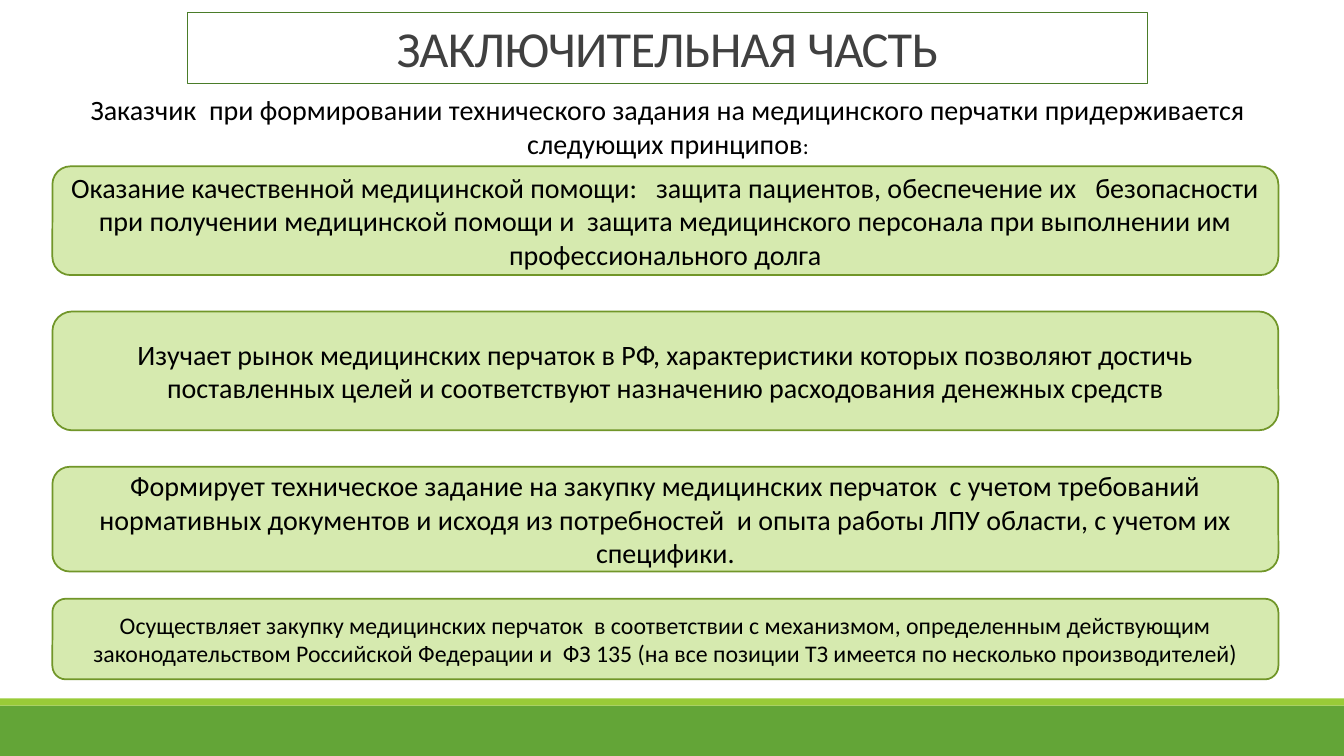
from pptx import Presentation
from pptx.dml.color import RGBColor
from pptx.enum.shapes import MSO_SHAPE
from pptx.enum.text import MSO_ANCHOR, PP_ALIGN
from pptx.util import Inches, Pt

RECTANGLE = MSO_SHAPE.RECTANGLE
ROUNDED = MSO_SHAPE.ROUNDED_RECTANGLE
CENTER = PP_ALIGN.CENTER
MIDDLE, TOP = MSO_ANCHOR.MIDDLE, MSO_ANCHOR.TOP

FONT = "Calibri"
WIDTH, HEIGHT = Inches(13.33), Inches(7.5)
COLORS = {
    "footer": "63A537",
    "stripe": "99CB38",
    "title_border": "4A7C29",
    "title": "404040",
    "text": "000000",
    "card": "D6EAAF",
    "card_border": "719629",
}

TITLE = "ЗАКЛЮЧИТЕЛЬНАЯ ЧАСТЬ"
INTRO = [
    ("Заказчик  при формировании технического задания на медицинского "
     "перчатки придерживается следующих принципов", 20),
    (":", 16),
]
PRINCIPLES = [
    (0, 21.2, 20,
     "Оказание качественной медицинской помощи:   защита пациентов, "
     "обеспечение их   безопасности при получении медицинской помощи и  "
     "защита медицинского персонала при выполнении им профессионального долга"),
    (28.29, 23.17, 20,
     "Изучает рынок медицинских перчаток в РФ, характеристики которых "
     "позволяют достичь поставленных целей и соответствуют назначению "
     "расходования денежных средств"),
    (58.55, 20.43, 20,
     "Формирует техническое задание на закупку медицинских перчаток  с учетом "
     "требований нормативных документов и исходя из потребностей  и опыта "
     "работы ЛПУ области, с учетом их специфики."),
    (84.28, 15.72, 17,
     "Осуществляет закупку медицинских перчаток  в соответствии с механизмом, "
     "определенным действующим законодательством Российской Федерации и  "
     "ФЗ 135 (на все позиции ТЗ имеется по несколько производителей)"),
]


def color(name):
    return RGBColor.from_string(COLORS[name])


def part(box, left, top, width, height):
    x, y, w, h = box
    return (round(x + w * left / 100), round(y + h * top / 100),
            round(w * width / 100), round(h * height / 100))


def add_block(slide, box, kind, fill=None, border=None, weight=0):
    block = slide.shapes.add_shape(kind, *box)
    block.shadow.inherit = False
    if fill:
        block.fill.solid()
        block.fill.fore_color.rgb = color(fill)
    else:
        block.fill.background()
    if border:
        block.line.color.rgb = color(border)
        block.line.width = Pt(weight)
    else:
        block.line.fill.background()
    return block


def write(frame, pieces, ink="text", anchor=TOP):
    frame.word_wrap = True
    frame.vertical_anchor = anchor
    paragraph = frame.paragraphs[0]
    paragraph.alignment = CENTER
    for words, size in pieces:
        run = paragraph.add_run()
        run.text = words
        run.font.name = FONT
        run.font.size = Pt(size)
        run.font.color.rgb = color(ink)
    return paragraph


def add_footer(slide, box):
    add_block(slide, part(box, 0, 12.28, 100, 87.72), RECTANGLE, "footer")
    add_block(slide, part(box, 0, 0, 100, 12.28), RECTANGLE, "stripe")


def add_title(slide, box):
    heading = add_block(slide, box, RECTANGLE, border="title_border", weight=0.75)
    paragraph = write(heading.text_frame, [(TITLE, 36)], "title")
    paragraph.runs[0].font._element.set("spc", "-50")


def add_intro(slide, box):
    intro = slide.shapes.add_textbox(*box)
    write(intro.text_frame, INTRO)


def add_principles(slide, box):
    for top, height, size, words in PRINCIPLES:
        card = add_block(slide, part(box, 0, top, 100, height), ROUNDED,
                         "card", "card_border", 1.25)
        write(card.text_frame, [(words, size)], anchor=MIDDLE)


def main():
    deck = Presentation()
    deck.slide_width, deck.slide_height = WIDTH, HEIGHT
    slide = deck.slides.add_slide(deck.slide_layouts[6])
    page = (0, 0, WIDTH, HEIGHT)
    add_footer(slide, part(page, 0, 92.4, 100, 7.6))
    add_title(slide, part(page, 13.95, 1.6, 71.42, 9.47))
    add_intro(slide, part(page, 4.5, 11.6, 90.4, 10.27))
    add_principles(slide, part(page, 3.9, 22, 91.22, 67.87))
    deck.save("out.pptx")


if __name__ == "__main__":
    main()
